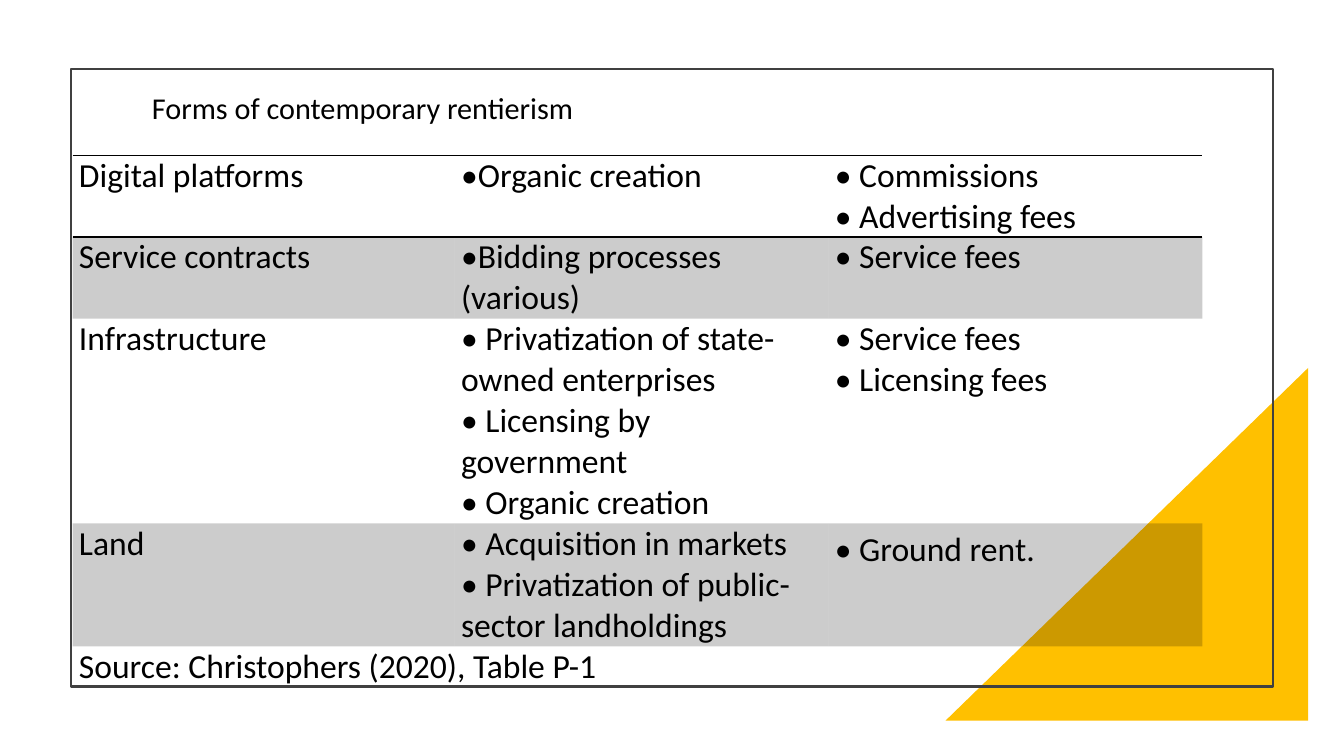
"""Build a slide with a table of the forms of contemporary rentierism."""
import pptx
import pptx.dml.color
import pptx.enum.shapes
import pptx.enum.text
import pptx.oxml
import pptx.oxml.ns
import pptx.util
from dataclasses import dataclass

Cm = pptx.util.Cm
Pt = pptx.util.Pt
RGB = pptx.dml.color.RGBColor.from_string


@dataclass(frozen=True)
class Theme:
    font: str = "Calibri"
    ink: str = "000000"
    accent: str = "FFC000"
    frame: str = "404040"
    title_size: float = 21.6
    body_size: float = 24
    frame_width: float = 1.5
    rule_width: float = 1
    band_alpha: int = 20


theme = Theme()


def write_paragraphs(text_frame, lines, size, paragraph_format):
    for index, line in enumerate(lines):
        paragraph = text_frame.paragraphs[0] if index == 0 else text_frame.add_paragraph()
        for name, value in paragraph_format.items():
            setattr(paragraph, name, value)
        run = paragraph.add_run()
        run.text = line
        for name, value in {"name": theme.font, "size": Pt(size)}.items():
            setattr(run.font, name, value)
        run.font.color.rgb = RGB(theme.ink)


presentation = pptx.Presentation()
presentation.slide_width = Cm(33.87)
presentation.slide_height = Cm(19.05)
slide = presentation.slides.add_slide(presentation.slide_layouts[6])

shape_kinds = pptx.enum.shapes.MSO_SHAPE
corner = slide.shapes.add_shape(shape_kinds.RIGHT_TRIANGLE, Cm(23.83), Cm(9.27), Cm(9.14), Cm(8.89))
corner.shadow.inherit = False
corner.fill.solid()
corner.fill.fore_color.rgb = RGB(theme.accent)
corner.line.fill.background()
corner.element.spPr.find(pptx.oxml.ns.qn("a:xfrm")).set("flipH", "1")

frame = slide.shapes.add_shape(shape_kinds.RECTANGLE, Cm(1.78), Cm(1.73), Cm(30.3), Cm(15.57))
frame.shadow.inherit = False
frame.fill.background()
frame.line.color.rgb = RGB(theme.frame)
frame.line.width = Pt(theme.frame_width)

title = slide.shapes.add_textbox(Cm(3.58), Cm(2.36), Cm(22.43), Cm(1.45))
title_format = {
    "word_wrap": True,
    "vertical_anchor": pptx.enum.text.MSO_ANCHOR.TOP,
    "margin_top": 0,
    "margin_bottom": 0,
}
for name, value in title_format.items():
    setattr(title.text_frame, name, value)
write_paragraphs(title.text_frame, ["Forms of contemporary rentierism"], theme.title_size, {"line_spacing": 0.9})

rows = [
    [["Digital platforms"], ["•Organic creation"], ["• Commissions", "• Advertising fees"]],
    [["Service contracts"], ["•Bidding processes (various)"], ["• Service fees"]],
    [
        ["Infrastructure"],
        ["• Privatization of state-owned enterprises", "• Licensing by government", "• Organic creation"],
        ["• Service fees", "• Licensing fees"],
    ],
    [
        ["Land"],
        ["• Acquisition in markets", "• Privatization of public-sector landholdings"],
        ["• Ground rent."],
    ],
    [["Source: Christophers (2020), Table P-1"], [], []],
]
column_widths = [9.63, 9.42, 9.42]
row_heights = [2.06, 2.06, 5.16, 3.1, 2.67]
ruled_rows = {0}
banded_rows = {1, 3}
paragraph_formats = {(3, 2): {"line_spacing": 1.15, "space_after": Pt(8)}}
cell_format = {"margin_left": Cm(0.16), "margin_right": Cm(0.16), "margin_top": 0, "margin_bottom": 0}

table_frame = slide.shapes.add_table(
    len(rows), len(column_widths), Cm(1.83), Cm(3.91), Cm(sum(column_widths)), Cm(sum(row_heights))
)
table = table_frame.table
for name, value in {"first_row": False, "horz_banding": False}.items():
    setattr(table, name, value)
style = table_frame.element.find(".//" + pptx.oxml.ns.qn("a:tableStyleId"))
style.text = "{2D5ABB26-0587-4C30-8999-92F81FD0307C}"
for column, width in zip(table.columns, column_widths):
    column.width = Cm(width)

for row_index, (row, height) in enumerate(zip(rows, row_heights)):
    table.rows[row_index].height = Cm(height)
    for column_index, lines in enumerate(row):
        cell = table.cell(row_index, column_index)
        for name, value in cell_format.items():
            setattr(cell, name, value)
        paragraph_format = paragraph_formats.get((row_index, column_index), {})
        write_paragraphs(cell.text_frame, lines, theme.body_size, paragraph_format)
        properties = cell._tc.get_or_add_tcPr()
        if row_index in banded_rows:
            cell.fill.solid()
            cell.fill.fore_color.rgb = RGB(theme.ink)
            color = properties.find(".//" + pptx.oxml.ns.qn("a:srgbClr"))
            alpha = color.makeelement(pptx.oxml.ns.qn("a:alpha"), {"val": str(theme.band_alpha * 1000)})
            color.append(alpha)
        else:
            cell.fill.background()
        if row_index in ruled_rows:
            for position, side in enumerate(["lnT", "lnB"]):
                border = pptx.oxml.parse_xml(
                    f'<a:{side} {pptx.oxml.ns.nsdecls("a")} w="{Pt(theme.rule_width)}">'
                    f'<a:solidFill><a:srgbClr val="{theme.ink}"/></a:solidFill></a:{side}>'
                )
                properties.insert(position, border)

table.cell(4, 0).merge(table.cell(4, 2))

presentation.save("out.pptx")
